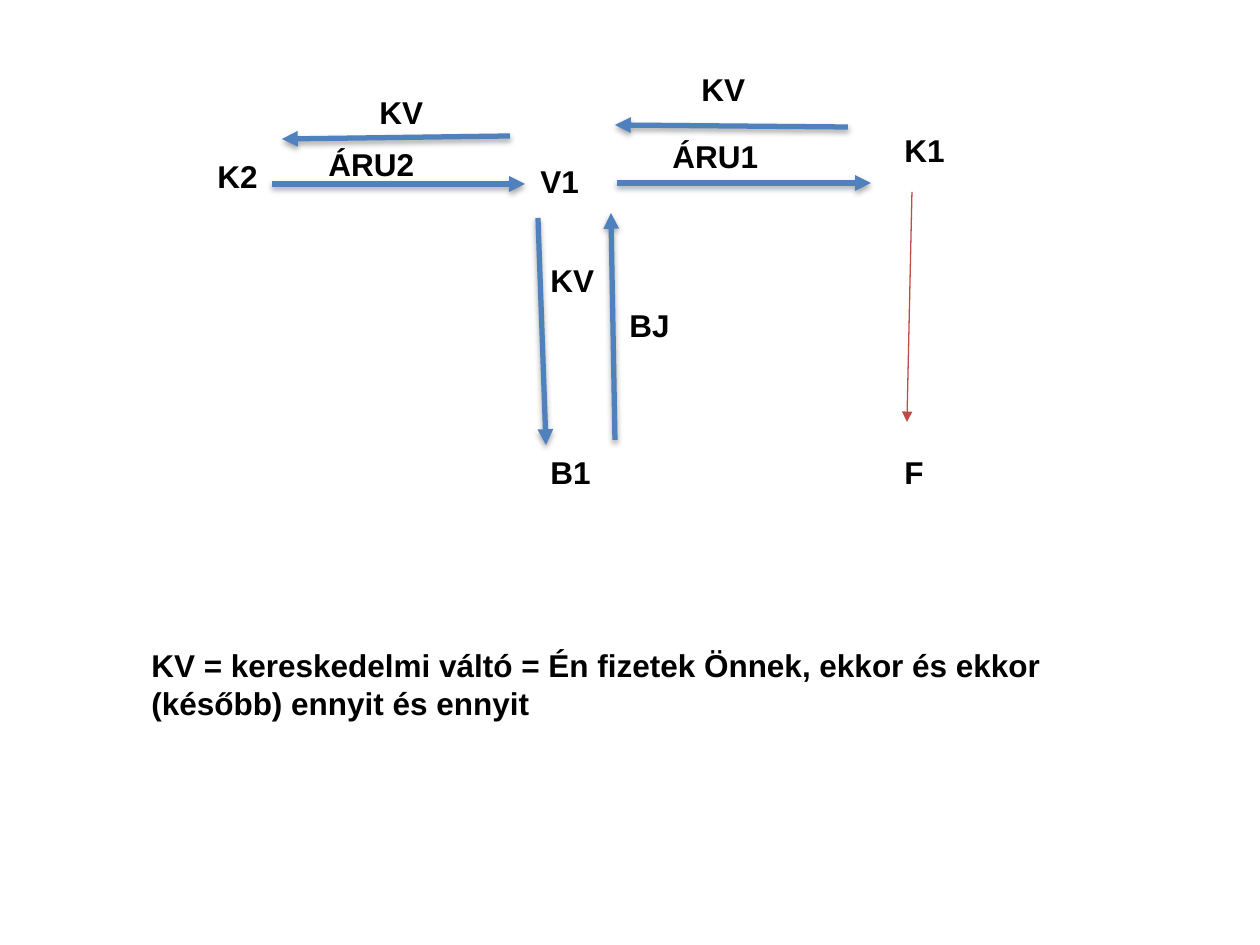
from dataclasses import dataclass

from lxml.etree import SubElement
from pptx import Presentation
from pptx.dml.color import RGBColor
from pptx.enum.shapes import MSO_CONNECTOR
from pptx.enum.text import MSO_AUTO_SIZE
from pptx.oxml.ns import qn
from pptx.util import Emu, Pt


@dataclass(frozen=True)
class Theme:
    font: str = "Arial"
    size: int = 18
    text: str = "000000"
    flow: str = "4F81BD"
    final: str = "BF4C48"
    shadow: str = "000000"
    flow_width: float = 3
    final_width: float = 0.75


THEME = Theme()
PX_PER_INCH = 126


def px(n):
    return Emu(round(n * 914400 / PX_PER_INCH))


def add_label(s, text, x, y, w, h):
    tf = s.shapes.add_textbox(px(x), px(y), px(w), px(h)).text_frame
    tf.word_wrap = True
    tf.auto_size = MSO_AUTO_SIZE.SHAPE_TO_FIT_TEXT
    r = tf.paragraphs[0].add_run()
    r.text = text
    r.font.name = THEME.font
    r.font.size = Pt(THEME.size)
    r.font.bold = True
    r.font.color.rgb = RGBColor.from_string(THEME.text)


def add_arrow(s, x1, y1, x2, y2, color, width, shadow):
    cn = s.shapes.add_connector(MSO_CONNECTOR.STRAIGHT, px(x1), px(y1), px(x2), px(y2))
    cn.line.color.rgb = RGBColor.from_string(color)
    cn.line.width = Pt(width)
    SubElement(cn.line._get_or_add_ln(), qn("a:tailEnd"), type="triangle")
    effects = SubElement(cn._element.spPr, qn("a:effectLst"))
    if shadow:
        outer = SubElement(effects, qn("a:outerShdw"), blurRad="40000", dist="23000",
                           dir="5400000", rotWithShape="0")
        clr = SubElement(outer, qn("a:srgbClr"), val=THEME.shadow)
        SubElement(clr, qn("a:alpha"), val="35000")


def add_bill_flow(s, left, top):
    """Draw the parties and the goods, bills and money passing between them."""
    flows = [
        (412, 119, 666, 119), (333, 154, 341, 381), (305, 72, 77, 75),
        (410, 376, 406, 149), (643, 63, 410, 61), (67, 120, 320, 120),
    ]
    for x1, y1, x2, y2 in flows:
        add_arrow(s, left + x1, top + y1, left + x2, top + y2,
                  THEME.flow, THEME.flow_width, True)
    add_arrow(s, left + 707, top + 128, left + 702, top + 358,
              THEME.final, THEME.final_width, False)

    labels = [
        ("V1", 323, 92, 89, 50), ("K1", 687, 61, 79, 50),
        ("B1", 333, 383, 79, 50), ("K2", 0, 87, 87, 50),
        ("F", 687, 383, 79, 50), ("BJ", 412, 236, 79, 50),
        ("ÁRU1", 455, 67, 127, 50), ("ÁRU2", 111, 75, 127, 50),
        ("KV", 484, 0, 118, 89), ("KV", 162, 23, 73, 53),
        ("KV", 333, 191, 73, 50),
    ]
    for text, x, y, w, h in labels:
        add_label(s, text, left + x, top + y, w, h)


def main():
    prs = Presentation()
    prs.slide_width, prs.slide_height = px(1260), px(945)
    s = prs.slides.add_slide(prs.slide_layouts[6])
    add_bill_flow(s, 205, 64)
    add_label(s, "KV = kereskedelmi váltó = Én fizetek Önnek, ekkor és ekkor "
                 "(később) ennyit és ennyit", 139, 640, 948, 89)
    prs.save("out.pptx")


if __name__ == "__main__":
    main()
